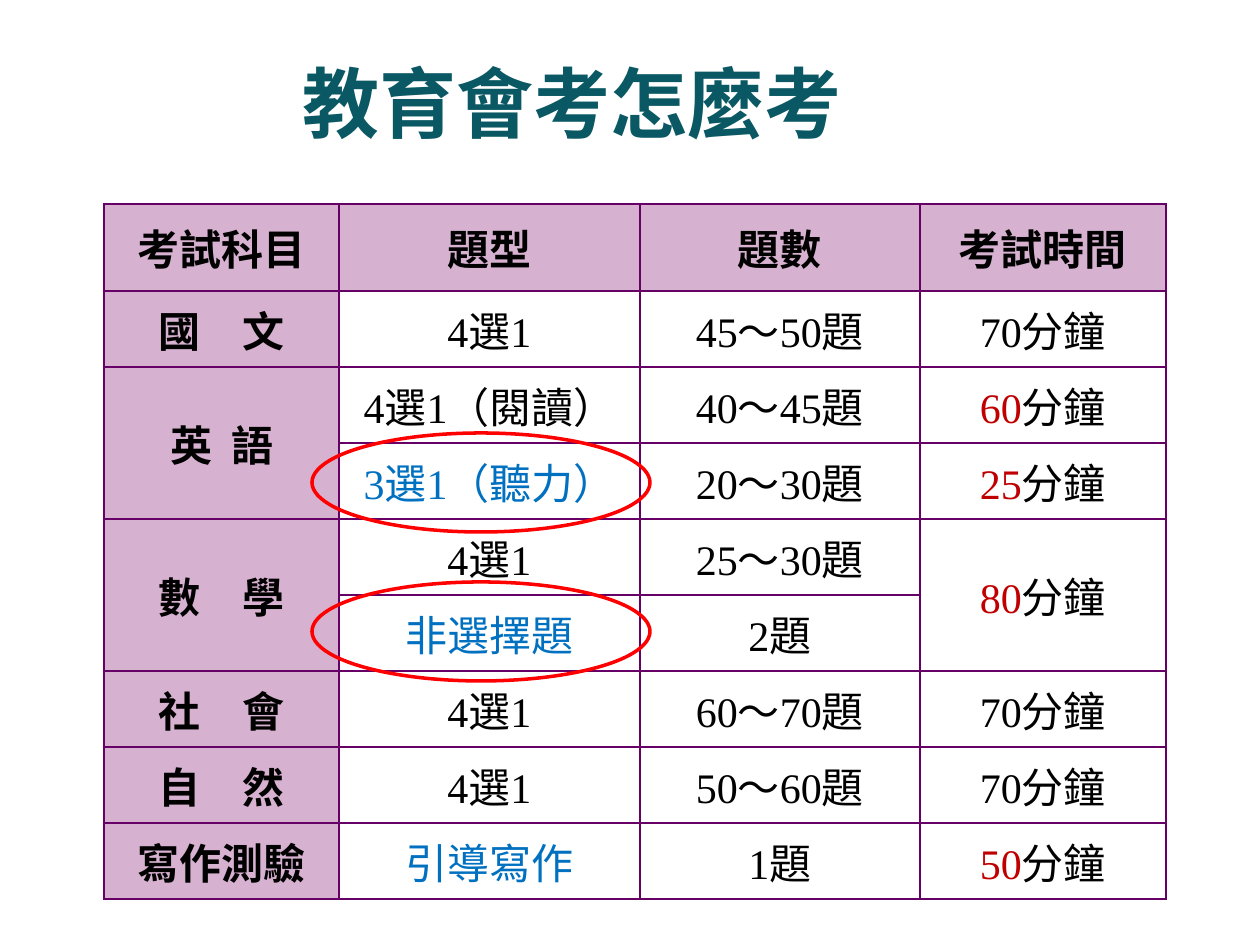
import pptx
import pptx.util
import pptx.dml.color
import pptx.enum.shapes
import pptx.enum.text
import pptx.oxml
import pptx.oxml.ns

PX = 914400 / 126
COLORS = {
    "title": "095863",
    "text": "000000",
    "red": "C00000",
    "blue": "0070C0",
    "head": "D7B1D0",
    "border": "660066",
    "ring": "FF0000",
}


def px(n):
    return pptx.util.Emu(round(n * PX))


def rgb(name):
    return pptx.dml.color.RGBColor.from_string(COLORS[name])


def add_run(p, text, size=24, font="Times New Roman", color="text", bold=False):
    r = p.add_run()
    r.text = text
    r.font.size = pptx.util.Pt(size)
    r.font.name = font
    r.font.bold = bold
    r.font.color.rgb = rgb(color)


def set_borders(cell):
    tc_pr = cell._tc.get_or_add_tcPr()
    for side in ("lnL", "lnR", "lnT", "lnB"):
        tc_pr.append(pptx.oxml.parse_xml(
            f'<a:{side} {pptx.oxml.ns.nsdecls("a")} w="12700"><a:solidFill>'
            f'<a:srgbClr val="{COLORS["border"]}"/></a:solidFill></a:{side}>'))


class SlideBuilder:
    def __init__(self, prs):
        self.s = prs.slides.add_slide(prs.slide_layouts[5])

    def title(self, text, x, y, w, h):
        sp = self.s.shapes.title
        sp.left, sp.top, sp.width, sp.height = map(px, (x, y, w, h))
        tf = sp.text_frame
        tf.vertical_anchor = pptx.enum.text.MSO_ANCHOR.MIDDLE
        p = tf.paragraphs[0]
        p.alignment = pptx.enum.text.PP_ALIGN.CENTER
        add_run(p, text, size=44, font="Calibri", color="title", bold=True)

    def cell(self, cell, runs, head):
        """Fill a cell from a string or a list of (text, color) runs."""
        set_borders(cell)
        if head:
            cell.fill.solid()
            cell.fill.fore_color.rgb = rgb("head")
        else:
            cell.fill.background()
        cell.vertical_anchor = pptx.enum.text.MSO_ANCHOR.MIDDLE
        cell.margin_left = cell.margin_right = pptx.util.Inches(0.02)
        cell.margin_top = cell.margin_bottom = pptx.util.Inches(0.02)
        p = cell.text_frame.paragraphs[0]
        p.alignment = pptx.enum.text.PP_ALIGN.CENTER
        if isinstance(runs, str):
            runs = [(runs, "text")]
        for text, color in runs:
            add_run(p, text, color=color, bold=head)

    def table(self, rows, x, y, widths, heights):
        """Draw a table; None joins a cell to the one above it."""
        frame = self.s.shapes.add_table(len(rows), len(widths), px(x), px(y),
                                        px(sum(widths)), px(sum(heights)))
        table = frame.table
        for column, w in zip(table.columns, widths):
            column.width = px(w)
        for row, h in zip(table.rows, heights):
            row.height = px(h)
        for i, row in enumerate(rows):
            for j, runs in enumerate(row):
                self.cell(table.cell(i, j), runs or [], head=i == 0 or j == 0)
                if runs is None:
                    table.cell(i - 1, j).merge(table.cell(i, j))

    def ring(self, x, y, w, h):
        sp = self.s.shapes.add_shape(pptx.enum.shapes.MSO_SHAPE.OVAL,
                                     px(x), px(y), px(w), px(h))
        sp.shadow.inherit = False
        sp.fill.background()
        sp.line.color.rgb = rgb("ring")
        sp.line.width = pptx.util.Pt(2)


def blue(text):
    return [(text, "blue")]


def changed_minutes(n):
    return [(str(n), "red"), ("分鐘", "text")]


EXAM_ROWS = [
    ["考試科目", "題型", "題數", "考試時間"],
    ["國　文", "4選1", "45～50題", "70分鐘"],
    ["英  語", "4選1（閱讀）", "40～45題", changed_minutes(60)],
    [None, blue("3選1（聽力）"), "20～30題", changed_minutes(25)],
    ["數　學", "4選1", "25～30題", changed_minutes(80)],
    [None, blue("非選擇題"), "2題", None],
    ["社　會", "4選1", "60～70題", "70分鐘"],
    ["自　然", "4選1", "50～60題", "70分鐘"],
    ["寫作測驗", blue("引導寫作"), "1題", changed_minutes(50)],
]


def main():
    prs = pptx.Presentation()
    prs.slide_width, prs.slide_height = px(1260), px(945)
    slide = SlideBuilder(prs)
    slide.title("教育會考怎麼考", 64, 23, 1016, 158)
    slide.table(EXAM_ROWS, 104, 204, [235, 301, 280, 246], [87] + [76] * 8)
    for y in (433, 582):
        slide.ring(312, y, 338, 99)
    prs.save("out.pptx")


if __name__ == "__main__":
    main()
